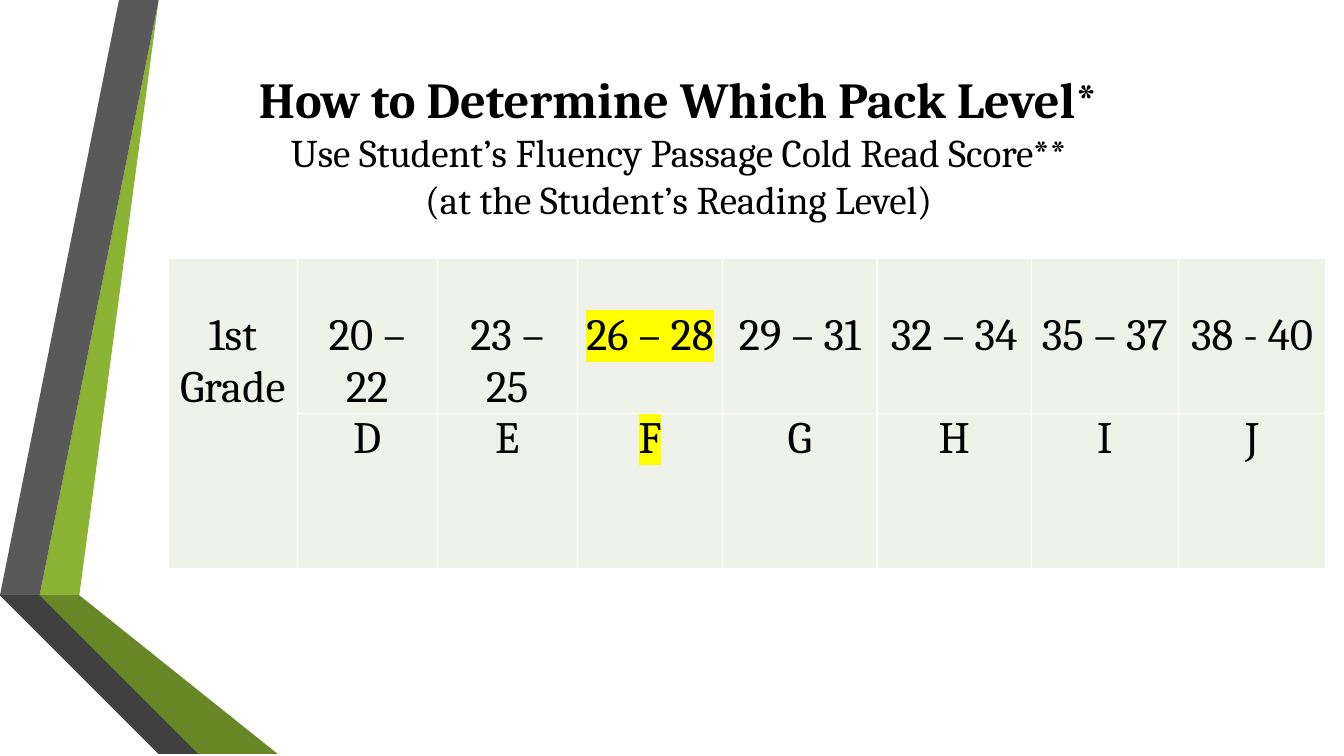
from dataclasses import dataclass

from lxml import etree
from pptx import Presentation
from pptx import util as u
from pptx.dml.color import RGBColor
from pptx.enum import text
from pptx.oxml import ns

FONT = "Cambria"
BLACK = "000000"
WHITE = "FFFFFF"
YELLOW = "FFFF00"
CELL_FILL = "EEF2E8"
COLUMN_WIDTHS = (3.25, 3.53, 3.53, 3.66, 3.89, 3.89, 3.71, 3.71)
ROW_HEIGHT = 3.89
SCORE_TOP_MARGIN = 1.3


@dataclass(frozen=True)
class Ribbon:
    color: str
    points: tuple[tuple[float, float], ...]


@dataclass(frozen=True)
class TitleLine:
    words: str
    size: int
    bold: bool


@dataclass(frozen=True)
class Level:
    score: str
    letter: str
    highlighted: bool = False


RIBBONS = (
    Ribbon("8BB434", ((1.27, 14.68), (1.96, 14.81), (4.39, 0), (3.68, 0))),
    Ribbon("595959", ((3.53, 0), (2.82, 0), (0.41, 14.55), (1.12, 14.66))),
    Ribbon("262626", ((0.41, 14.55), (3.68, 19.05), (3.84, 19.05))),
    Ribbon("465A1A", ((1.27, 14.71), (5.28, 19.05), (5.44, 19.05))),
    Ribbon("688727", ((1.27, 14.68), (5.44, 19.05), (7.19, 19.05), (1.96, 14.81))),
    Ribbon("404040", ((5.13, 19.05), (1.22, 14.81), (1.12, 14.66), (0.41, 14.55), (3.84, 19.05))),
)

TITLE_LINES = (
    TitleLine("How to Determine Which Pack Level*", 36, True),
    TitleLine("Use Student’s Fluency Passage Cold Read Score**", 28, False),
    TitleLine("(at the Student’s Reading Level)", 28, False),
)

LEVELS = (
    Level("20 – 22", "D"),
    Level("23 – 25", "E"),
    Level("26 – 28", "F", True),
    Level("29 – 31", "G"),
    Level("32 – 34", "H"),
    Level("35 – 37", "I"),
    Level("38 - 40", "J"),
)


def paint(target, color: str) -> None:
    target.solid()
    target.fore_color.rgb = RGBColor.from_string(color)


def write_line(para, words: str, size: int, bold: bool = False):
    para.alignment = text.PP_ALIGN.CENTER
    para.font.name = FONT
    para.font.size = u.Pt(size)
    para.font.bold = bold
    paint(para.font.fill, BLACK)
    span = para.add_run()
    span.text = words
    return span


def add_color(parent, tag: str, color: str) -> None:
    holder = etree.SubElement(parent, ns.qn(tag))
    etree.SubElement(holder, ns.qn("a:srgbClr"), val=color)


def add_borders(cell) -> None:
    properties = cell._tc.get_or_add_tcPr()
    for position, side in enumerate(("a:lnL", "a:lnR", "a:lnT", "a:lnB")):
        border = etree.Element(ns.qn(side), w=str(u.Pt(1)))
        add_color(border, "a:solidFill", WHITE)
        properties.insert(position, border)


def draw_ribbon(page, ribbon: Ribbon) -> None:
    start, *rest = ribbon.points
    builder = page.shapes.build_freeform(*start, scale=u.Cm(1))
    builder.add_line_segments(rest, close=True)
    shape = builder.convert_to_shape()
    shape.shadow.inherit = False
    paint(shape.fill, ribbon.color)
    shape.line.fill.background()


def write_title(page) -> None:
    title = page.shapes.title
    title.left, title.top = u.Cm(5.38), u.Cm(1.57)
    title.width, title.height = u.Cm(23.44), u.Cm(4.19)
    frame = title.text_frame
    frame.word_wrap = True
    frame.auto_size = text.MSO_AUTO_SIZE.NONE
    frame.vertical_anchor = text.MSO_ANCHOR.MIDDLE
    for index, line in enumerate(TITLE_LINES):
        para = frame.add_paragraph() if index else frame.paragraphs[0]
        write_line(para, line.words, line.size, line.bold)


def fill_cell(cell, lines: tuple[str, ...], top: float, highlighted: bool = False) -> None:
    cell.margin_left = cell.margin_right = u.Cm(0.18)
    cell.margin_top, cell.margin_bottom = u.Cm(top), 0
    for index, words in enumerate(lines):
        frame = cell.text_frame
        para = frame.add_paragraph() if index else frame.paragraphs[0]
        span = write_line(para, words, 32)
        if highlighted:
            add_color(span.font._element, "a:highlight", YELLOW)


def draw_table(page) -> None:
    frame = page.shapes.add_table(
        2, len(COLUMN_WIDTHS), u.Cm(4.24), u.Cm(6.52),
        u.Cm(sum(COLUMN_WIDTHS)), u.Cm(2 * ROW_HEIGHT),
    )
    table = frame.table
    table.first_row = table.horz_banding = False
    for column, width in zip(table.columns, COLUMN_WIDTHS):
        column.width = u.Cm(width)
    for row in table.rows:
        row.height = u.Cm(ROW_HEIGHT)
    for cell in table.iter_cells():
        paint(cell.fill, CELL_FILL)
        add_borders(cell)
    table.cell(0, 0).merge(table.cell(1, 0))
    fill_cell(table.cell(0, 0), ("1st", "Grade"), SCORE_TOP_MARGIN)
    for index, level in enumerate(LEVELS, start=1):
        fill_cell(table.cell(0, index), (level.score,), SCORE_TOP_MARGIN, level.highlighted)
        fill_cell(table.cell(1, index), (level.letter,), 0, level.highlighted)


def main() -> None:
    deck = Presentation()
    deck.slide_width, deck.slide_height = u.Cm(33.87), u.Cm(19.05)
    page = deck.slides.add_slide(deck.slide_layouts[5])
    paint(page.background.fill, WHITE)
    for ribbon in RIBBONS:
        draw_ribbon(page, ribbon)
    draw_table(page)
    write_title(page)
    deck.save("out.pptx")


if __name__ == "__main__":
    main()
